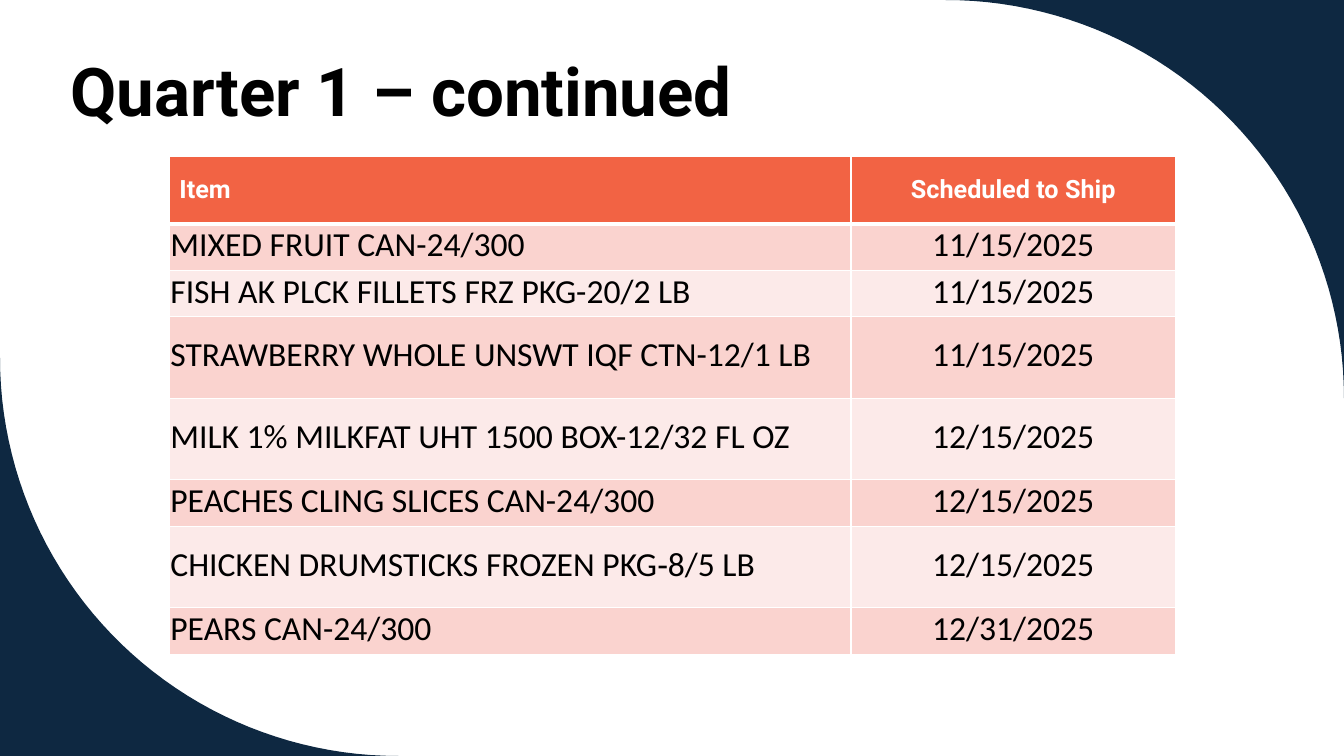
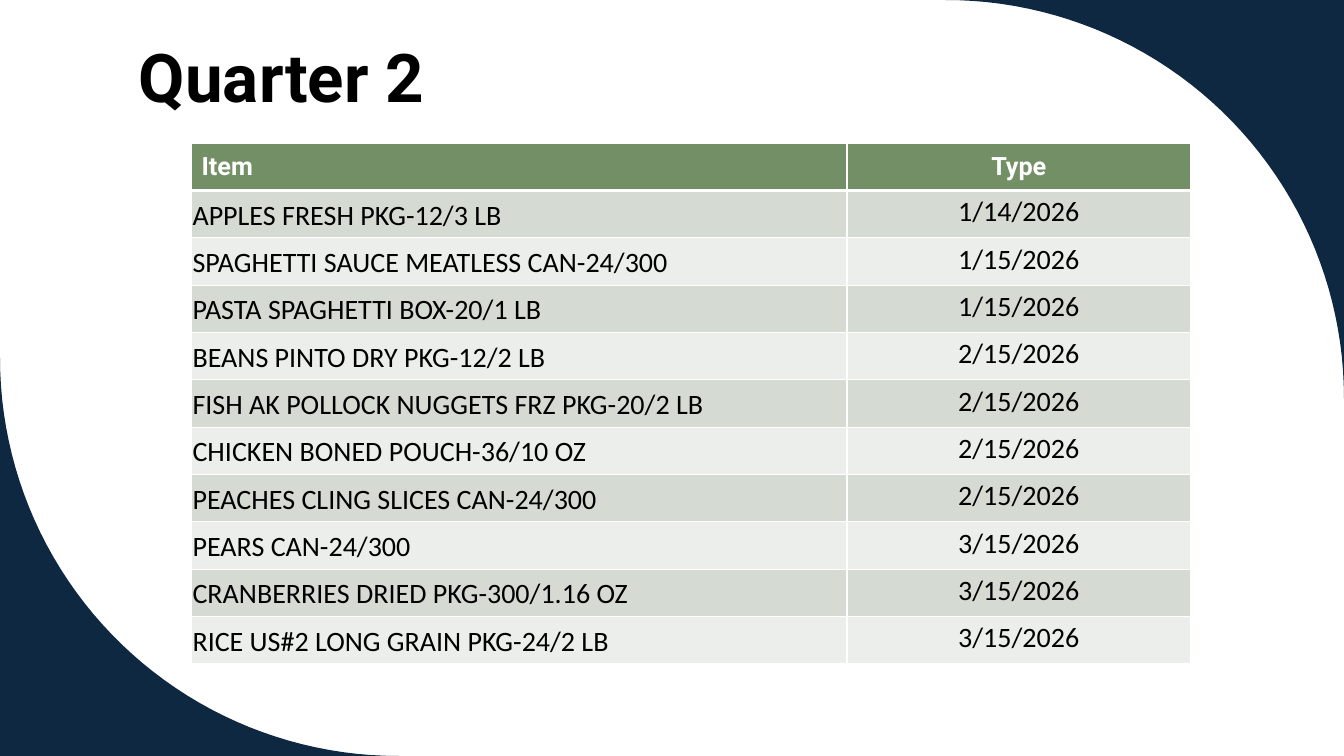
from math import cos, radians, sin

from lxml import etree
from pptx import Presentation
from pptx.dml.color import RGBColor
from pptx.enum.text import MSO_ANCHOR as ANCHOR, PP_ALIGN as ALIGN
from pptx.oxml.ns import qn
from pptx.util import Inches, Pt

COLORS = {
    "navy": "0E2841", "white": "FFFFFF", "black": "000000",
    "orange": "F26344", "rose": "FAD3CF", "blush": "FCEAE9",
    "green": "738F65", "sage": "D5DBD3", "mist": "EBEEEA",
}
TITLE_FONT, BODY_FONT = "Roboto", "Calibri"
WIDTH, HEIGHT, RADIUS = 13.33, 7.5, 3.95
# Each corner: tip, arc centre, start angle in degrees (clockwise from right)
CORNERS = [
    ((WIDTH, 0), (WIDTH - RADIUS, RADIUS), 270),
    ((0, HEIGHT), (RADIUS, HEIGHT - RADIUS), 90),
]

SLIDES = [
    {
        "title": "Quarter 1 – continued", "title_box": (0.6, 0.5, 7.81, 0.85),
        "at": (1.68, 1.55), "cols": (6.76, 3.22),
        "rows": (0.67, 0.43, 0.43, 0.81, 0.81, 0.43, 0.81, 0.43),
        "header_fill": "orange", "bands": ("rose", "blush"),
        "size": 24, "item_anchor": ANCHOR.MIDDLE,
        "cells": [
            ("Item", "Scheduled to Ship"),
            ("MIXED FRUIT CAN-24/300", "11/15/2025"),
            ("FISH AK PLCK FILLETS FRZ PKG-20/2 LB", "11/15/2025"),
            ("STRAWBERRY WHOLE UNSWT IQF CTN-12/1 LB", "11/15/2025"),
            ("MILK 1% MILKFAT UHT 1500 BOX-12/32 FL OZ", "12/15/2025"),
            ("PEACHES CLING SLICES CAN-24/300", "12/15/2025"),
            ("CHICKEN DRUMSTICKS FROZEN PKG‐8/5 LB", "12/15/2025"),
            ("PEARS CAN-24/300", "12/31/2025"),
        ],
    },
    {
        "title": "Quarter 2", "title_box": (1.28, 0.34, 3.25, 0.87),
        "at": (1.9, 1.42), "cols": (6.5, 3.41), "rows": (0.47,) * 11,
        "header_fill": "green", "bands": ("sage", "mist"),
        "size": 20, "item_anchor": ANCHOR.BOTTOM,
        "cells": [
            ("Item", "Type"),
            ("APPLES FRESH PKG-12/3 LB", "1/14/2026"),
            ("SPAGHETTI SAUCE MEATLESS CAN-24/300", "1/15/2026"),
            ("PASTA SPAGHETTI BOX-20/1 LB", "1/15/2026"),
            ("BEANS PINTO DRY PKG-12/2 LB", "2/15/2026"),
            ("FISH AK POLLOCK NUGGETS FRZ PKG-20/2 LB", "2/15/2026"),
            ("CHICKEN BONED POUCH-36/10 OZ", "2/15/2026"),
            ("PEACHES CLING SLICES CAN-24/300", "2/15/2026"),
            ("PEARS CAN-24/300", "3/15/2026"),
            ("CRANBERRIES DRIED PKG-300/1.16 OZ", "3/15/2026"),
            ("RICE US#2 LONG GRAIN PKG-24/2 LB", "3/15/2026"),
        ],
    },
]


def style_text(p, font, size, color, bold):
    f = p.runs[0].font
    f.name, f.size, f.bold = font, Pt(size), bold
    f.color.rgb = RGBColor.from_string(COLORS[color])


def set_borders(cell, top, bottom):
    """Draw white cell borders, 1 pt at the sides; top and bottom in points."""
    tc_pr = cell._tc.get_or_add_tcPr()
    widths = {"a:lnL": 1, "a:lnR": 1, "a:lnT": top, "a:lnB": bottom}
    for i, (tag, width) in enumerate(widths.items()):
        ln = etree.Element(qn(tag), w=str(Pt(width)))
        fill = etree.SubElement(ln, qn("a:solidFill"))
        etree.SubElement(fill, qn("a:srgbClr"), val=COLORS["white"])
        tc_pr.insert(i, ln)


prs = Presentation()
prs.slide_width, prs.slide_height = Inches(WIDTH), Inches(HEIGHT)

for data in SLIDES:
    s = prs.slides.add_slide(prs.slide_layouts[6])

    for tip, (cx, cy), start in CORNERS:
        angles = [radians(start + step) for step in range(0, 91, 2)]
        arc = [(Inches(cx + RADIUS * cos(a)), Inches(cy + RADIUS * sin(a)))
               for a in angles]
        builder = s.shapes.build_freeform(Inches(tip[0]), Inches(tip[1]))
        builder.add_line_segments(arc, close=True)
        sp = builder.convert_to_shape()
        sp.shadow.inherit = False
        sp.fill.solid()
        sp.fill.fore_color.rgb = RGBColor.from_string(COLORS["navy"])
        sp.line.fill.background()

    tf = s.shapes.add_textbox(*map(Inches, data["title_box"])).text_frame
    tf.word_wrap = True
    tf.vertical_anchor = ANCHOR.BOTTOM
    p = tf.paragraphs[0]
    p.text = data["title"]
    p.line_spacing = 0.9
    style_text(p, TITLE_FONT, 48, "black", True)

    cells, cols, rows = data["cells"], data["cols"], data["rows"]
    left, top = data["at"]
    table = s.shapes.add_table(
        len(rows), len(cols), Inches(left), Inches(top),
        Inches(sum(cols)), Inches(sum(rows))).table
    for column, width in zip(table.columns, cols):
        column.width = Inches(width)
    for r, height in enumerate(rows):
        table.rows[r].height = Inches(height)
        is_header = r == 0
        fill = data["header_fill"] if is_header else data["bands"][(r - 1) % 2]
        for c, text in enumerate(cells[r]):
            cell = table.cell(r, c)
            cell.fill.solid()
            cell.fill.fore_color.rgb = RGBColor.from_string(COLORS[fill])
            set_borders(cell, 3 if r == 1 else 1, 3 if is_header else 1)
            cell.vertical_anchor = ANCHOR.MIDDLE
            p = cell.text_frame.paragraphs[0]
            p.text = text
            p.alignment = ALIGN.CENTER if c else ALIGN.LEFT
            if is_header:
                style_text(p, TITLE_FONT, 18, "white", True)
            else:
                style_text(p, BODY_FONT, data["size"], "black", False)
                cell.margin_left = cell.margin_right = Inches(0.01)
                cell.margin_top, cell.margin_bottom = Inches(0.01), Inches(0.05)
                if c == 0:
                    cell.vertical_anchor = data["item_anchor"]

prs.save("out.pptx")
